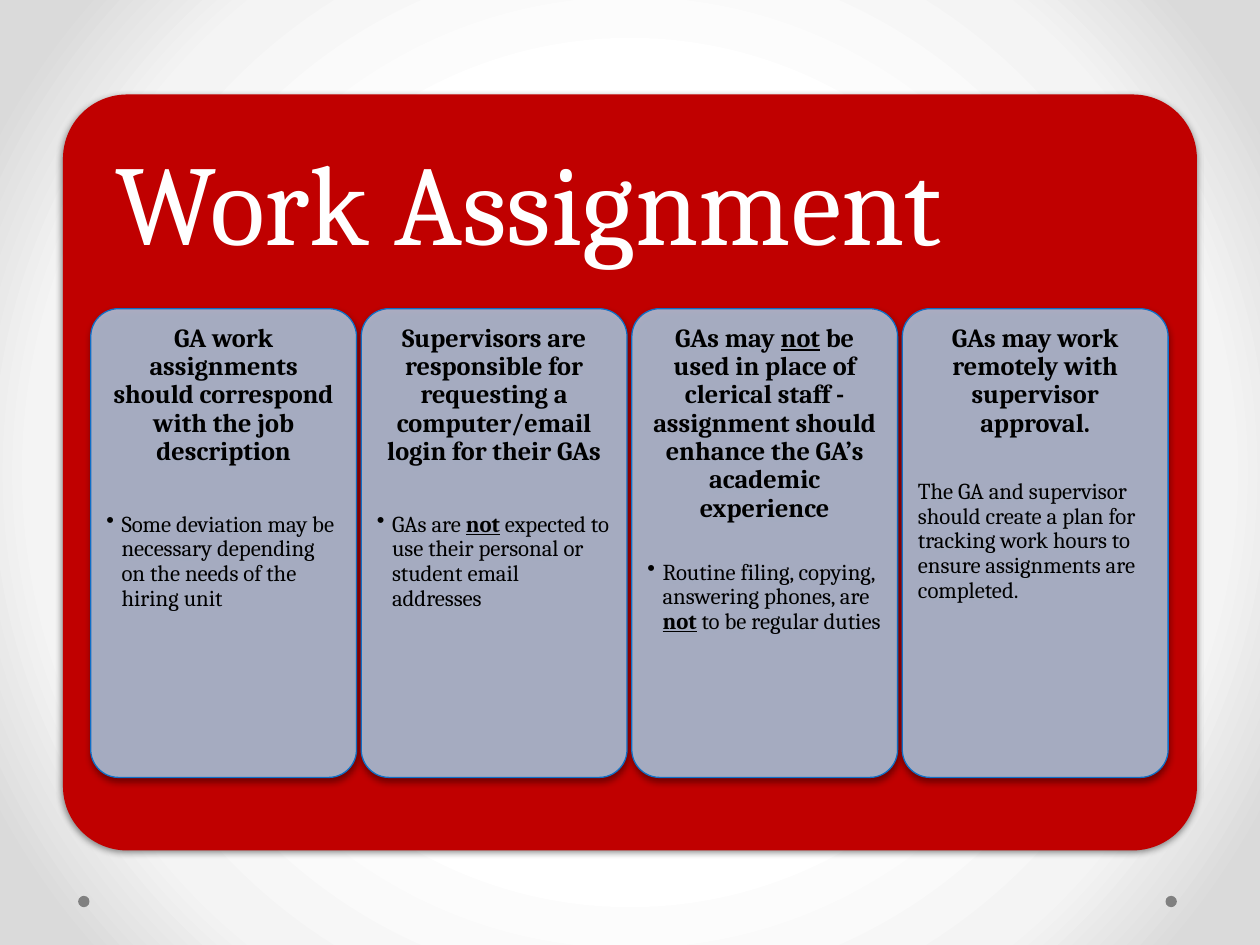
"""Build the Work Assignment slide."""
from lxml.etree import SubElement
from pptx import Presentation
from pptx.dml.color import RGBColor
from pptx.enum.shapes import MSO_SHAPE
from pptx.enum.text import MSO_ANCHOR, MSO_AUTO_SIZE, PP_ALIGN
from pptx.oxml import parse_xml
from pptx.oxml.ns import nsdecls, qn
from pptx.util import Inches, Pt

FONT = "Cambria"
RED = RGBColor(0xC0, 0x00, 0x00)
CARD_FILL = RGBColor(0xAB, 0xBE, 0xD5)
CARD_LINE = RGBColor(0x0F, 0x6F, 0xC6)
GRAY = RGBColor(0x80, 0x80, 0x80)
BLACK = RGBColor(0x00, 0x00, 0x00)
WHITE = RGBColor(0xFF, 0xFF, 0xFF)
BACKDROP = ((50, "FFFFFF"), (76, "F4F4F4"), (92, "DADADA"))

# Heading runs, detail runs, whether the detail is bulleted, gap in points
CARDS = (
    (["GA work assignments should correspond with the job description"],
     ["Some deviation may be necessary depending on the needs of the hiring unit"],
     True, 26.5),
    (["Supervisors are responsible for requesting a computer/email login for their GAs"],
     ["GAs are ", "not", " expected to use their personal or student email addresses"],
     True, 26.5),
    (["GAs may ", "not",
      " be used in place of clerical staff - assignment should enhance the GA’s academic experience"],
     ["Routine filing, copying, answering phones, are ", "not", " to be regular duties"],
     True, 21.5),
    (["GAs may work remotely with supervisor approval."],
     ["The GA and supervisor should create a plan for tracking work hours to ensure "
      "assignments are completed."],
     False, 24),
)


def paint_background(slide):
    """Fill the background with a radial gradient."""
    slide.background.fill.solid()
    properties = slide.background._cSld.bg.bgPr
    stops = "".join(f'<a:gs pos="{pos * 1000}"><a:srgbClr val="{color}"/></a:gs>'
                    for pos, color in BACKDROP)
    gradient = parse_xml(
        f'<a:gradFill {nsdecls("a")} rotWithShape="1"><a:gsLst>{stops}</a:gsLst>'
        '<a:path path="circle"><a:fillToRect l="50000" t="50000" r="50000" b="50000"/>'
        '</a:path></a:gradFill>')
    properties.replace(properties.find(qn("a:solidFill")), gradient)


def add_panel(slide, preset, left, top, width, height, color,
              corner=None, line=None, opacity=None, shadow=False):
    """Add a filled preset shape."""
    panel = slide.shapes.add_shape(preset, Inches(left), Inches(top),
                                   Inches(width), Inches(height))
    panel.shadow.inherit = False
    panel.fill.solid()
    panel.fill.fore_color.rgb = color
    if corner is not None:
        panel.adjustments[0] = corner
    if line is None:
        panel.line.fill.background()
    else:
        panel.line.color.rgb = line
        panel.line.width = Pt(0.75)
    properties = panel._element.spPr
    if opacity is not None:
        tint = properties.find(qn("a:solidFill")).find(qn("a:srgbClr"))
        SubElement(tint, qn("a:alpha")).set("val", str(opacity * 1000))
    if shadow:
        properties.find(qn("a:effectLst")).append(parse_xml(
            f'<a:outerShdw {nsdecls("a")} blurRad="{Pt(4)}" dist="{Pt(2)}" dir="5400000" '
            'rotWithShape="0"><a:srgbClr val="000000"><a:alpha val="45000"/>'
            '</a:srgbClr></a:outerShdw>'))
    return panel


def prepare_frame(frame, inset, bottom=None):
    """Wrap a text frame from the top with even insets."""
    frame.word_wrap = True
    frame.auto_size = MSO_AUTO_SIZE.NONE
    frame.vertical_anchor = MSO_ANCHOR.TOP
    frame.margin_left = frame.margin_top = frame.margin_right = Inches(inset)
    frame.margin_bottom = Inches(inset if bottom is None else bottom)


def write_text(paragraph, runs, size, color=BLACK, bold=False,
               align=PP_ALIGN.LEFT, after=0, bullet=False):
    """Write runs into a paragraph, underlining every second one."""
    paragraph.alignment = align
    paragraph.line_spacing = 0.9
    paragraph.space_before = Pt(0)
    paragraph.space_after = Pt(after)
    for index, words in enumerate(runs):
        emphasis = index % 2 == 1
        run = paragraph.add_run()
        run.text = words
        run.font.name = FONT
        run.font.size = Pt(size)
        run.font.color.rgb = color
        run.font.bold = bold or emphasis
        run.font.underline = emphasis
    if bullet:
        properties = paragraph._p.get_or_add_pPr()
        properties.set("marL", str(Inches(0.12)))
        properties.set("indent", str(-Inches(0.12)))
        SubElement(properties, qn("a:buChar")).set("char", "•")


def add_title(slide):
    """Place the title over the red panel."""
    title = slide.shapes.title
    title.left, title.top = Inches(0.65), Inches(0.9)
    title.width, title.height = Inches(8.7), Inches(5.7)
    prepare_frame(title.text_frame, 0.27, bottom=3.7)
    write_text(title.text_frame.paragraphs[0], ["Work Assignment"], 65, color=WHITE)
    return title


def add_card(slide, left, heading, detail, bulleted, gap):
    """Add one card with its heading and detail."""
    card = add_panel(slide, MSO_SHAPE.ROUNDED_RECTANGLE, left, 2.45, 2.11, 3.72,
                     CARD_FILL, corner=0.105, line=CARD_LINE, opacity=90, shadow=True)
    frame = card.text_frame
    prepare_frame(frame, 0.06)
    write_text(frame.paragraphs[0], heading, 15, bold=True,
               align=PP_ALIGN.CENTER, after=gap)
    write_text(frame.add_paragraph(), detail, 13, bullet=bulleted)


def main():
    """Build and save the slide."""
    deck = Presentation()
    deck.slide_width, deck.slide_height = Inches(10), Inches(7.5)
    slide = deck.slides.add_slide(deck.slide_layouts[5])
    paint_background(slide)
    for dot_left in (9.25, 0.62):
        add_panel(slide, MSO_SHAPE.OVAL, dot_left, 7.11, 0.09, 0.09, GRAY)
    backing = add_panel(slide, MSO_SHAPE.ROUNDED_RECTANGLE, 0.5, 0.75, 9, 6, RED,
                        corner=0.085, shadow=True)
    title = add_title(slide)
    title._element.addprevious(backing._element)
    for column, card in enumerate(CARDS):
        add_card(slide, 0.72 + column * 2.147, *card)
    deck.save("out.pptx")


if __name__ == "__main__":
    main()
